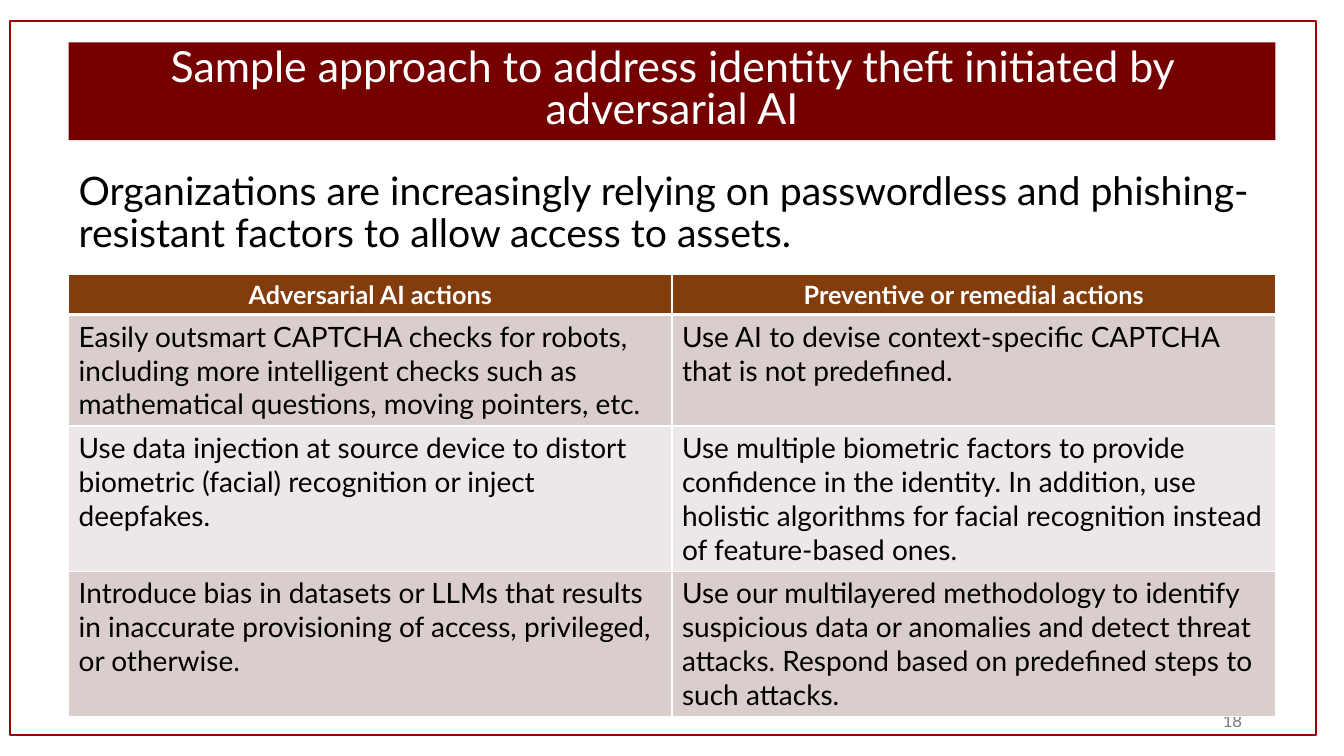
from dataclasses import dataclass

from lxml import etree
from pptx import Presentation
from pptx.dml.color import RGBColor
from pptx.enum.shapes import MSO_SHAPE
from pptx.enum.text import MSO_ANCHOR, MSO_AUTO_SIZE, PP_ALIGN
from pptx.oxml.ns import qn
from pptx.util import Inches, Pt

LEFT, CENTER, RIGHT = PP_ALIGN.LEFT, PP_ALIGN.CENTER, PP_ALIGN.RIGHT
TOP, MIDDLE = MSO_ANCHOR.TOP, MSO_ANCHOR.MIDDLE
FIXED = MSO_AUTO_SIZE.NONE
RECT = MSO_SHAPE.RECTANGLE

WIDE, HIGH = Inches(13.33), Inches(7.5)
FONT = "Lato"
HUES = {
    "banner": "740000",
    "frame": "A20000",
    "head": "833C0B",
    "dark": "D9CECC",
    "light": "EDE8E7",
    "white": "FFFFFF",
    "black": "000000",
    "gray": "797979",
}


@dataclass(frozen=True)
class Box:
    """A place on the slide, in percent of its width and height."""
    x: float
    y: float
    w: float
    h: float

    def emu(self) -> tuple[int, int, int, int]:
        return (int(WIDE * self.x / 100), int(HIGH * self.y / 100),
                int(WIDE * self.w / 100), int(HIGH * self.h / 100))


@dataclass(frozen=True)
class Style:
    size: float
    hue: str
    align: PP_ALIGN = LEFT
    bold: bool = False
    lead: float = 1.0
    before: float = 0


@dataclass(frozen=True)
class Row:
    high: float
    fill: str
    cells: tuple[str, str]


BANNER = Box(5.1, 5.6, 89.8, 12.93)
FRAME = Box(0.75, 2.8, 97.15, 94.4)
NUMBER = Box(70.67, 92.67, 22.5, 5.33)
BODY = Box(5.1, 22, 89.8, 72.53)
GRID = Box(5.1, 36.27, 89.8, 58.2)

TITLE_STYLE = Style(30.6, "white", CENTER, lead=0.8, before=10)
BODY_STYLE = Style(28, "black", lead=0.9, before=10)
PAGE_STYLE = Style(12, "gray", RIGHT)
HEAD_STYLE = Style(18, "white", CENTER, bold=True)
CELL_STYLE = Style(20, "black")

TITLE = "Sample approach to address identity theft initiated by adversarial AI"
INTRO = ("Organizations are increasingly relying on passwordless and "
         "phishing-resistant factors to allow access to assets.")
ROWS = [
    Row(5.1, "head", ("Adversarial AI actions", "Preventive or remedial actions")),
    Row(14.7, "dark", (
        "Easily outsmart CAPTCHA checks for robots, including more intelligent "
        "checks such as mathematical questions, moving pointers, etc.",
        "Use AI to devise context-specific CAPTCHA that is not predefined.")),
    Row(19.2, "light", (
        "Use data injection at source device to distort biometric (facial) "
        "recognition or inject deepfakes.",
        "Use multiple biometric factors to provide confidence in the identity. "
        "In addition, use holistic algorithms for facial recognition instead "
        "of feature-based ones.")),
    Row(19.2, "dark", (
        "Introduce bias in datasets or LLMs that results in inaccurate "
        "provisioning of access, privileged, or otherwise.",
        "Use our multilayered methodology to identify suspicious data or "
        "anomalies and detect threat attacks. Respond based on predefined "
        "steps to such attacks.")),
]


def color(name: str) -> RGBColor:
    return RGBColor.from_string(HUES[name])


def paint(item, name: str) -> None:
    item.fill.solid()
    item.fill.fore_color.rgb = color(name)


def place(shape, box: Box) -> None:
    shape.left, shape.top, shape.width, shape.height = box.emu()


def write(frame, text: str, style: Style) -> None:
    frame.text = text
    para = frame.paragraphs[0]
    para.alignment = style.align
    para.line_spacing = style.lead
    para.space_before = Pt(style.before)
    font = para.runs[0].font
    font.name, font.size, font.bold = FONT, Pt(style.size), style.bold
    font.color.rgb = color(style.hue)


def fit(frame, anchor: MSO_ANCHOR) -> None:
    frame.word_wrap = True
    frame.auto_size = FIXED
    frame.vertical_anchor = anchor


def edge(cell, side: str, width: float) -> None:
    """Add a white border; call in schema order, before the fill."""
    props = cell._tc.get_or_add_tcPr()
    line = etree.SubElement(props, qn(f"a:ln{side}"), w=str(Pt(width)))
    fill = etree.SubElement(line, qn("a:solidFill"))
    etree.SubElement(fill, qn("a:srgbClr"), val=HUES["white"])


def add_title(slide) -> None:
    title = slide.shapes.title
    place(title, BANNER)
    paint(title, "banner")
    write(title.text_frame, TITLE, TITLE_STYLE)
    fit(title.text_frame, MIDDLE)


def add_frame(slide) -> None:
    frame = slide.shapes.add_shape(RECT, *FRAME.emu())
    frame.shadow.inherit = False
    frame.fill.background()
    frame.line.color.rgb = color("frame")
    frame.line.width = Pt(1.5)


def add_page(slide) -> None:
    page = slide.shapes.add_textbox(*NUMBER.emu())
    write(page.text_frame, "18", PAGE_STYLE)
    fit(page.text_frame, MIDDLE)


def add_body(slide) -> None:
    body = slide.placeholders[1]
    place(body, BODY)
    write(body.text_frame, INTRO, BODY_STYLE)
    fit(body.text_frame, TOP)
    props = body.text_frame.paragraphs[0]._p.get_or_add_pPr()
    props.set("marL", "0")
    props.set("indent", "0")
    etree.SubElement(props, qn("a:buNone"))


def add_grid(slide) -> None:
    count = len(ROWS[0].cells)
    table = slide.shapes.add_table(len(ROWS), count, *GRID.emu()).table
    for i, row in enumerate(ROWS):
        table.rows[i].height = int(HIGH * row.high / 100)
        style = CELL_STYLE if i else HEAD_STYLE
        for j, text in enumerate(row.cells):
            cell = table.cell(i, j)
            write(cell.text_frame, text, style)
            for side in "LRTB":
                thick = (i, side) in ((0, "B"), (1, "T"))
                edge(cell, side, 3 if thick else 1)
            paint(cell, row.fill)


def main() -> None:
    deck = Presentation()
    deck.slide_width, deck.slide_height = WIDE, HIGH
    slide = deck.slides.add_slide(deck.slide_layouts[1])
    for draw in (add_title, add_frame, add_page, add_body, add_grid):
        draw(slide)
    deck.save("out.pptx")


if __name__ == "__main__":
    main()
